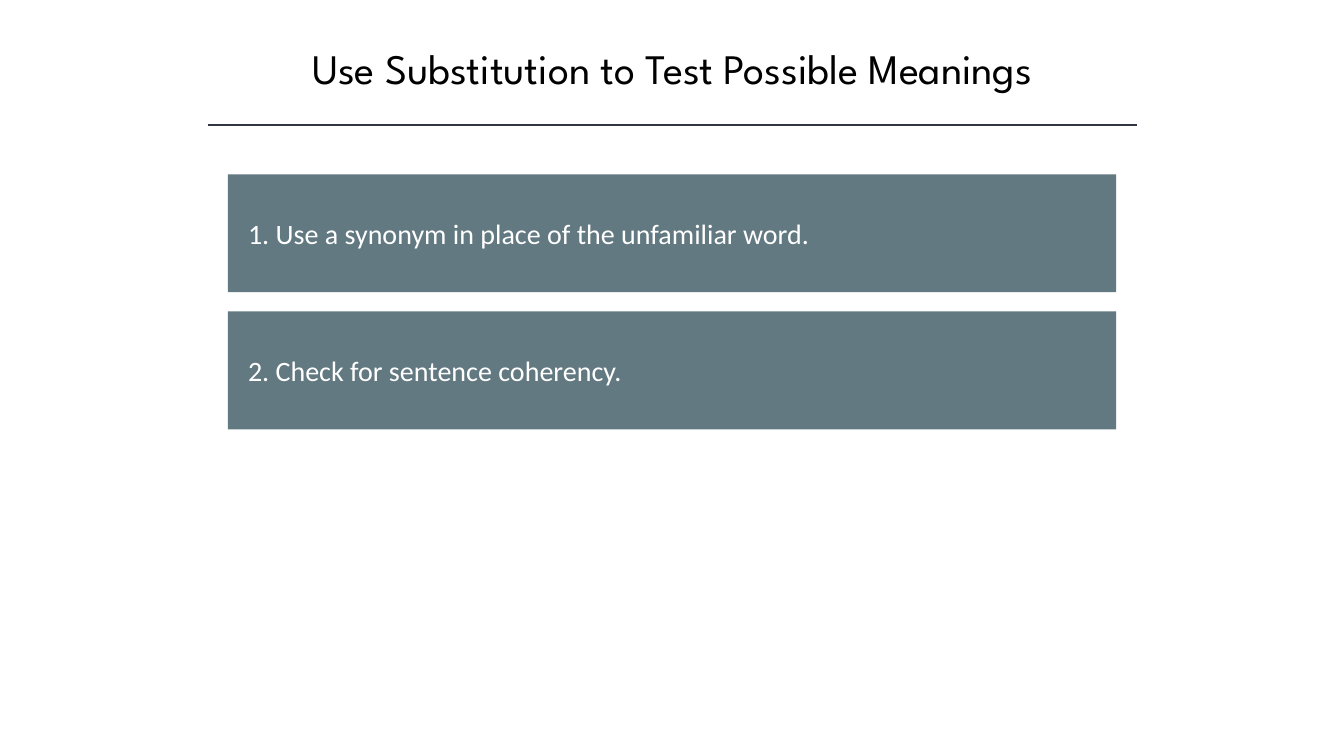
from pptx import Presentation
from pptx.dml.color import RGBColor
from pptx.enum.shapes import MSO_CONNECTOR, MSO_SHAPE
from pptx.enum.text import MSO_ANCHOR, PP_ALIGN
from pptx.oxml.ns import qn
from pptx.util import Inches, Pt

RECT, STRAIGHT = MSO_SHAPE.RECTANGLE, MSO_CONNECTOR.STRAIGHT
MIDDLE, LEFT, CENTER = MSO_ANCHOR.MIDDLE, PP_ALIGN.LEFT, PP_ALIGN.CENTER

COLORS = {"title": "000000", "rule": "323542", "bar": "627981", "bar_text": "FFFFFF"}
TITLE_FONT = {"name": "League Spartan", "size": Pt(30)}
STEP_FONT = {"name": "Calibri", "size": Pt(20)}

TITLE = "Use Substitution to Test Possible Meanings"
STEPS = [
    "1. Use a synonym in place of the unfamiliar word.",
    "2. Check for sentence coherency.",
]


def rgb(key):
    return RGBColor.from_string(COLORS[key])


def write(tf, text, font, color, align):
    tf.word_wrap = True
    p = tf.paragraphs[0]
    p.alignment = align
    r = p.add_run()
    r.text = text
    for name, value in font.items():
        setattr(r.font, name, value)
    r.font.color.rgb = rgb(color)


def add_title(slide, x, y, w, h):
    sp = slide.shapes.add_textbox(Inches(x), Inches(y), Inches(w), Inches(h))
    write(sp.text_frame, TITLE, TITLE_FONT, "title", CENTER)


def add_rule(slide, x, y, w):
    line = slide.shapes.add_connector(
        STRAIGHT, Inches(x), Inches(y), Inches(x + w), Inches(y))
    line.line.color.rgb = rgb("rule")
    line.line.width = Pt(1)
    sp_pr = line._element.spPr
    sp_pr.append(sp_pr.makeelement(qn("a:effectLst"), {}))


def add_steps(slide, x, y, w, bar_h, pitch):
    for i, step in enumerate(STEPS):
        sp = slide.shapes.add_shape(
            RECT, Inches(x), Inches(y + i * pitch), Inches(w), Inches(bar_h))
        sp.shadow.inherit = False
        sp.fill.solid()
        sp.fill.fore_color.rgb = rgb("bar")
        sp.line.fill.background()
        tf = sp.text_frame
        tf.vertical_anchor = MIDDLE
        tf.margin_left = tf.margin_right = Inches(0.2)
        write(tf, step, STEP_FONT, "bar_text", LEFT)


def main():
    prs = Presentation()
    prs.slide_width, prs.slide_height = Inches(13.33), Inches(7.5)
    slide = prs.slides.add_slide(prs.slide_layouts[6])

    # Heading with the line below it
    add_title(slide, 1.67, 0.37, 10, 0.61)
    add_rule(slide, 2.06, 1.24, 9.22)

    # Numbered steps
    add_steps(slide, 2.26, 1.73, 8.81, 1.17, 1.36)

    prs.save("out.pptx")


if __name__ == "__main__":
    main()
